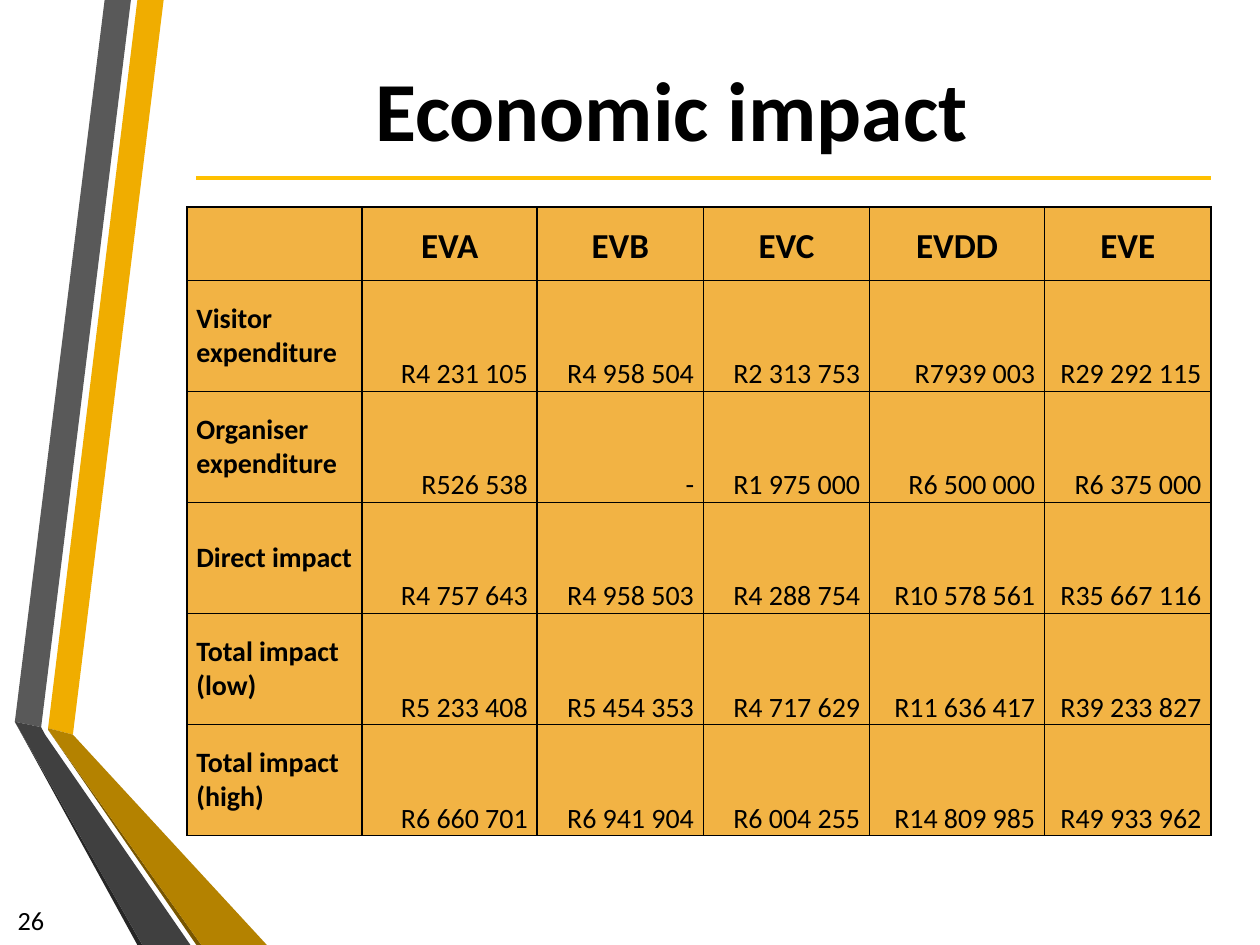
from lxml import etree
from pptx import Presentation
from pptx.dml.color import RGBColor
from pptx.enum.shapes import MSO_CONNECTOR
from pptx.enum.text import MSO_ANCHOR, PP_ALIGN
from pptx.oxml.ns import qn
from pptx.util import Cm, Pt

LEFT, CENTER, RIGHT = PP_ALIGN.LEFT, PP_ALIGN.CENTER, PP_ALIGN.RIGHT
MIDDLE, BOTTOM = MSO_ANCHOR.MIDDLE, MSO_ANCHOR.BOTTOM
STRAIGHT = MSO_CONNECTOR.STRAIGHT

FONT = "Calibri"
COLORS = {
    "text": "000000",
    "rule": "FFC000",
    "cell": "F2B344",
    "gold": "F0AD00",
    "gold_dark": "B48200",
    "gold_edge": "785600",
    "gray": "595959",
    "gray_dark": "404040",
    "gray_edge": "262626",
}

# Ribbon outlines in cm, relative to the ribbon box
RIBBONS = [
    ("gold", [(0.67, 14.68), (1.17, 14.81), (3, 0), (2.47, 0)]),
    ("gray", [(2.34, 0), (1.81, 0), (0, 14.55), (0.53, 14.66)]),
    ("gray_edge", [(0, 14.55), (2.47, 19.05), (2.57, 19.05)]),
    ("gold_edge", [(0.67, 14.71), (3.66, 19.05), (3.76, 19.05)]),
    ("gold_dark", [(0.67, 14.68), (0.67, 14.71), (3.76, 19.05), (5.08, 19.05), (1.17, 14.81)]),
    ("gray_dark", [(3.54, 19.05), (0.61, 14.81), (0.53, 14.66), (0, 14.55), (2.57, 19.05)]),
]

COLUMN_WIDTHS = [3.53, 3.53, 3.35, 3.35, 3.53, 3.35]
HEADER_HEIGHT = 1.48
IMPACT_ROWS = [
    ["", "EVA", "EVB", "EVC", "EVDD", "EVE"],
    ["Visitor expenditure", "R4 231 105", "R4 958 504", "R2 313 753", "R7939 003", "R29 292 115"],
    ["Organiser expenditure", "R526 538", "-", "R1 975 000", "R6 500 000", "R6 375 000"],
    ["Direct impact", "R4 757 643", "R4 958 503", "R4 288 754", "R10 578 561", "R35 667 116"],
    ["Total impact (low)", "R5 233 408", "R5 454 353", "R4 717 629", "R11 636 417", "R39 233 827"],
    ["Total impact (high)", "R6 660 701", "R6 941 904", "R6 004 255", "R14 809 985", "R49 933 962"],
]


def color(name):
    return RGBColor.from_string(COLORS[name])


def write_text(text_frame, text, size, bold=False, align=LEFT, spacing=1.0, before=0):
    paragraph = text_frame.paragraphs[0]
    paragraph.alignment = align
    paragraph.line_spacing = spacing
    paragraph.space_before = Pt(before)
    run = paragraph.add_run()
    run.text = text
    run.font.name = FONT
    run.font.size = Pt(size)
    run.font.bold = bold
    run.font.color.rgb = color("text")


def add_label(slide, text, left, top, width, height, **text_format):
    shape = slide.shapes.add_textbox(Cm(left), Cm(top), Cm(width), Cm(height))
    shape.text_frame.word_wrap = True
    shape.text_frame.vertical_anchor = MIDDLE
    write_text(shape.text_frame, text, **text_format)


def add_ribbons(slide, left, top):
    for fill, outline in RIBBONS:
        points = [(Cm(left + x), Cm(top + y)) for x, y in outline]
        builder = slide.shapes.build_freeform(*points[0])
        builder.add_line_segments(points[1:], close=True)
        shape = builder.convert_to_shape()
        shape.shadow.inherit = False
        shape.fill.solid()
        shape.fill.fore_color.rgb = color(fill)
        shape.line.fill.background()


def add_heading(slide, left, top, width, height):
    add_label(slide, "Economic impact", left, top, width, height,
              size=48, bold=True, align=CENTER)
    # Rule below the title
    rule_left, rule_top = left + 0.86, top + 2.39
    rule = slide.shapes.add_connector(
        STRAIGHT, Cm(rule_left), Cm(rule_top), Cm(rule_left + 20.45), Cm(rule_top))
    rule.line.color.rgb = color("rule")
    rule.line.width = Pt(2.25)
    etree.SubElement(rule._element.spPr, qn("a:effectLst"))


def add_cell_borders(cell):
    properties = cell._tc.get_or_add_tcPr()
    for index, side in enumerate(("lnL", "lnR", "lnT", "lnB")):
        border = etree.Element(qn(f"a:{side}"), w=str(Pt(1)))
        fill = etree.SubElement(border, qn("a:solidFill"))
        etree.SubElement(fill, qn("a:srgbClr"), val=COLORS["text"])
        properties.insert(index, border)


def add_impact_table(slide, left, top, width, height):
    frame = slide.shapes.add_table(
        len(IMPACT_ROWS), len(COLUMN_WIDTHS), Cm(left), Cm(top), Cm(width), Cm(height))
    table = frame.table
    for column, column_width in zip(table.columns, COLUMN_WIDTHS):
        column.width = Cm(column_width)
    body_height = (height - HEADER_HEIGHT) / (len(IMPACT_ROWS) - 1)

    for row_index, values in enumerate(IMPACT_ROWS):
        is_header = row_index == 0
        table.rows[row_index].height = Cm(HEADER_HEIGHT if is_header else body_height)
        for column_index, value in enumerate(values):
            is_name = column_index == 0
            cell = table.cell(row_index, column_index)
            cell.fill.solid()
            cell.fill.fore_color.rgb = color("cell")
            cell.margin_left = cell.margin_right = Cm(0.19)
            cell.margin_top = cell.margin_bottom = 0
            cell.vertical_anchor = MIDDLE if is_header or is_name else BOTTOM
            add_cell_borders(cell)
            if value:
                write_text(cell.text_frame, value,
                           size=20 if is_header else 16,
                           bold=is_header or is_name,
                           align=CENTER if is_header else LEFT if is_name else RIGHT,
                           spacing=1.0 if is_name else 1.15,
                           before=6)


def main():
    presentation = Presentation()
    presentation.slide_width, presentation.slide_height = Cm(25.4), Cm(19.05)
    slide = presentation.slides.add_slide(presentation.slide_layouts[6])
    add_ribbons(slide, 0.3, 0)
    add_heading(slide, 3.1, 1.19, 20.88, 1.98)
    add_impact_table(slide, 3.77, 4.17, sum(COLUMN_WIDTHS), 12.68)
    # Slide number
    add_label(slide, "26", 0, 18.03, 1.14, 1.02, size=15, align=RIGHT)
    presentation.save("out.pptx")


if __name__ == "__main__":
    main()
